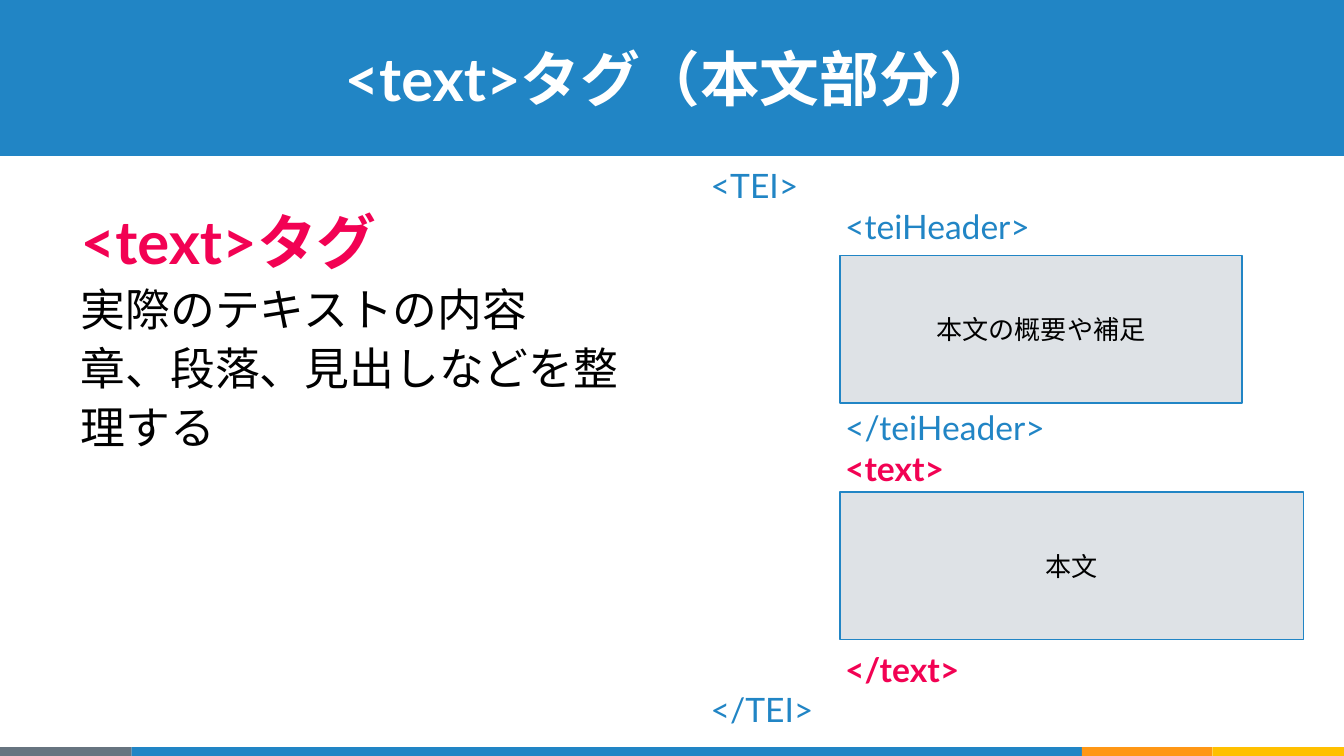
from dataclasses import dataclass

from lxml.etree import Element
from pptx import Presentation
from pptx.dml.color import RGBColor
from pptx.enum.shapes import MSO_SHAPE as Preset
from pptx.enum.text import MSO_ANCHOR as Anchor, MSO_AUTO_SIZE as AutoSize, PP_ALIGN as Align
from pptx.oxml.ns import qn
from pptx.util import Inches, Pt

BLUE, PINK, BLACK, WHITE = "2185C5", "F20253", "000000", "FFFFFF"
GRAY, ORANGE, YELLOW, PALE = "677480", "FF9715", "FFC000", "DEE2E6"
FONT = "Lato"
LINE_PITCH = 21.6


@dataclass
class Area:
    left: float
    top: float
    width: float
    height: float


@dataclass
class Block:
    area: Area
    fill: str
    label: str = ""


@dataclass
class Line:
    text: str
    size: float
    color: str
    bold: bool = False
    indent: float = 0
    skipped_lines: int = 0


def rgb(value: str) -> RGBColor:
    return RGBColor.from_string(value)


def place(shape, area: Area) -> None:
    shape.left, shape.top = Inches(area.left), Inches(area.top)
    shape.width, shape.height = Inches(area.width), Inches(area.height)


def write(box, lines: list[Line], anchor=Anchor.TOP, align=Align.LEFT, spacing: float = 1.0) -> None:
    frame = box.text_frame
    frame.word_wrap = True
    frame.auto_size = AutoSize.NONE
    frame.vertical_anchor = anchor
    frame.margin_left = frame.margin_right = Inches(0.1)
    frame.margin_top = frame.margin_bottom = Inches(0.1)
    for index, line in enumerate(lines):
        para = frame.add_paragraph() if index else frame.paragraphs[0]
        para.text = line.text
        para.alignment = align
        para.line_spacing = spacing
        para.space_before = Pt(line.skipped_lines * LINE_PITCH)
        para.space_after = Pt(0)
        para.font.name = FONT
        para.font.size = Pt(line.size)
        para.font.bold = line.bold
        para.font.color.rgb = rgb(line.color)
        properties = para._p.get_or_add_pPr()
        properties.set("marL", str(Inches(line.indent)))
        properties.set("indent", "0")
        properties.find(qn("a:defRPr")).addprevious(Element(qn("a:buNone")))


def draw_block(page, block: Block):
    area = block.area
    shape = page.shapes.add_shape(
        Preset.RECTANGLE, Inches(area.left), Inches(area.top), Inches(area.width), Inches(area.height)
    )
    shape.shadow.inherit = False
    shape.fill.solid()
    shape.fill.fore_color.rgb = rgb(block.fill)
    if block.label:
        shape.line.color.rgb = rgb(BLUE)
        shape.line.width = Pt(0.75)
        write(shape, [Line(block.label, 14, BLACK)], Anchor.MIDDLE, Align.CENTER)
    else:
        shape.line.fill.background()
    return shape


def draw_backdrop(page, title) -> None:
    bands = [Block(Area(0, 0, 10, 1.16), BLUE)]
    left = 0
    for width, fill in [(0.98, GRAY), (7.07, BLUE), (0.97, ORANGE), (0.98, YELLOW)]:
        bands.append(Block(Area(left, 5.56, width, 0.08), fill))
        left += width
    for band in bands:
        title.element.addprevious(draw_block(page, band).element)


def draw_outline(page) -> None:
    box = page.shapes.add_textbox(Inches(5.19), Inches(1.13), Inches(3.4), Inches(0.46))
    write(box, [
        Line("<TEI>", 18, BLUE),
        Line("<teiHeader>", 18, BLUE, indent=1),
        Line("</teiHeader>", 18, BLUE, indent=1, skipped_lines=4),
        Line("<text>", 18, PINK, True, indent=1),
        Line("</text>", 18, PINK, True, indent=1, skipped_lines=4),
        Line("</TEI>", 18, BLUE),
    ])


def main() -> None:
    deck = Presentation()
    deck.slide_width = Inches(10)
    deck.slide_height = deck.slide_width * 9 // 16
    page = deck.slides.add_slide(deck.slide_layouts[1])

    title, body = page.shapes.title, page.placeholders[1]
    draw_backdrop(page, title)
    place(title, Area(0.5, 0.21, 9, 0.94))
    write(title, [Line("<text>タグ（本文部分）", 32, WHITE, True)], align=Align.CENTER)
    place(body, Area(0.5, 1.37, 4.47, 2.45))
    write(body, [
        Line("<text>タグ", 32, PINK, True),
        Line("実際のテキストの内容", 24, BLACK),
        Line("章、段落、見出しなどを整理する", 24, BLACK),
    ], spacing=1.1)

    draw_block(page, Block(Area(6.25, 1.9, 2.99, 1.1), PALE, "本文の概要や補足"))
    draw_outline(page)
    draw_block(page, Block(Area(6.25, 3.66, 3.45, 1.1), PALE, "本文"))
    deck.save("out.pptx")


if __name__ == "__main__":
    main()
